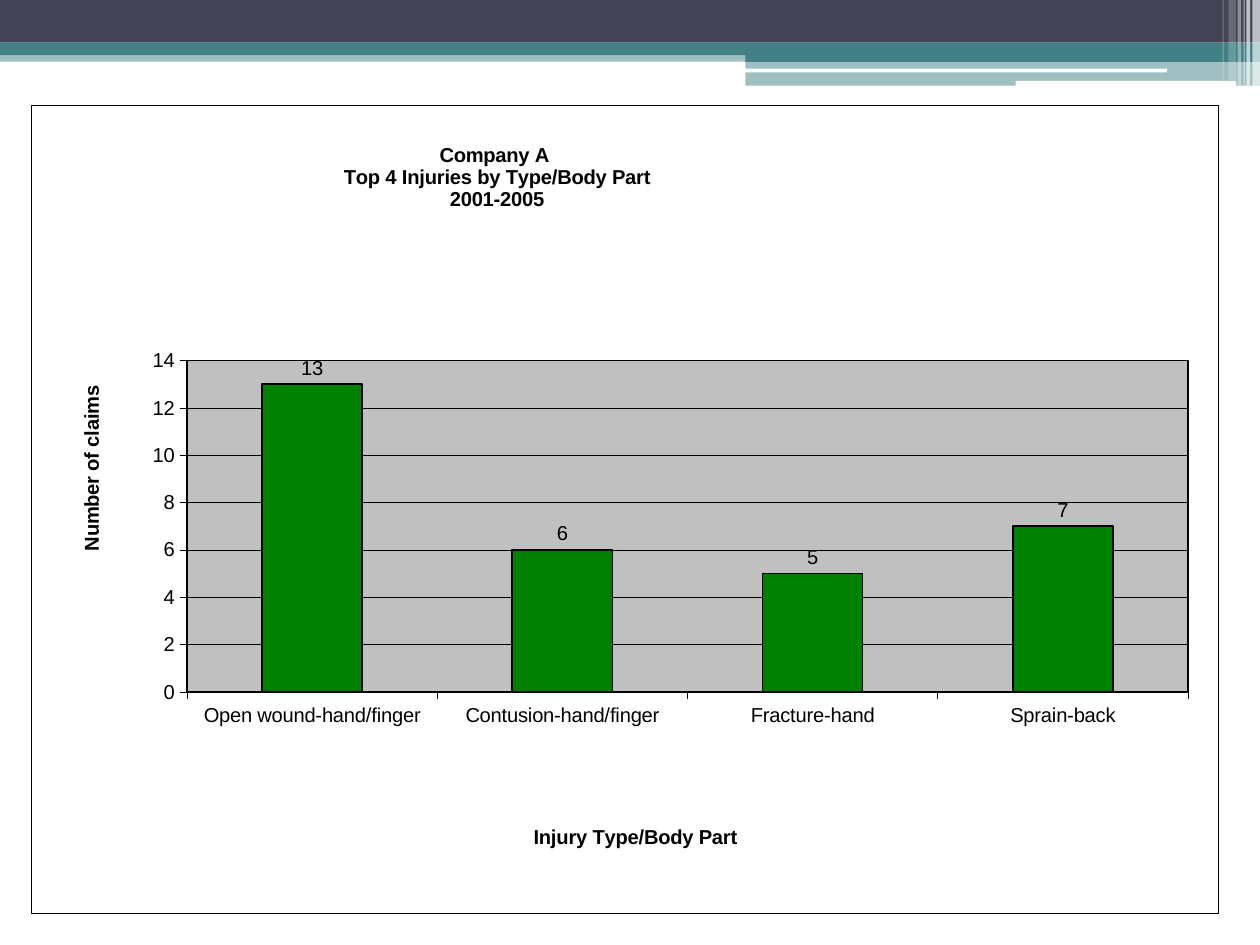
import pptx
import pptx.chart.data
import pptx.dml.color
import pptx.enum.chart
import pptx.enum.shapes
import pptx.oxml
import pptx.oxml.ns
import pptx.util
from lxml import etree

Pt = pptx.util.Pt
qn = pptx.oxml.ns.qn
NS = pptx.oxml.ns.nsdecls("c", "a")

TEAL, NAVY, WHITE, BLACK = "438086", "424456", "FFFFFF", "000000"
GRAY, GREEN = "C0C0C0", "008000"


def color(value):
    return pptx.dml.color.RGBColor.from_string(value)


class SlideBuilder:
    font_name = "Arial"
    font_size = Pt(11.5)
    hairline = Pt(0.25)

    def __init__(self, slide):
        self.slide = slide

    def paint(self, fill, value):
        fill.solid()
        fill.fore_color.rgb = color(value)

    def rule(self, line, width):
        line.color.rgb = color(BLACK)
        line.width = width

    def style_font(self, font, bold=False):
        font.name = self.font_name
        font.size = self.font_size
        font.bold = bold
        font.color.rgb = color(BLACK)

    def bar(self, left, top, width, height, fill, opacity=100, rounded=False):
        kinds = pptx.enum.shapes.MSO_SHAPE
        kind = kinds.ROUNDED_RECTANGLE if rounded else kinds.RECTANGLE
        band = self.slide.shapes.add_shape(kind, Pt(left), Pt(top), Pt(width), Pt(height))
        band.shadow.inherit = False
        band.line.fill.background()
        self.paint(band.fill, fill)
        if opacity < 100:
            tint = band.fill._xPr.find(".//" + qn("a:srgbClr"))
            etree.SubElement(tint, qn("a:alpha"), val=str(opacity * 1000))

    def place(self, element, position, inner=False):
        layout = element.find(qn("c:layout"))
        if layout is None:
            layout = etree.Element(qn("c:layout"))
            text = element.find(qn("c:tx"))
            element.insert(0 if text is None else 1, layout)
        manual = etree.SubElement(layout, qn("c:manualLayout"))
        if inner:
            etree.SubElement(manual, qn("c:layoutTarget"), val="inner")
        for mode in ("xMode", "yMode"):
            etree.SubElement(manual, qn("c:" + mode), val="edge")
        for side, share in zip("xywh", position):
            etree.SubElement(manual, qn("c:" + side), val=str(share))

    def chart_title(self, title, lines, position):
        frame = title.text_frame
        frame.text = "\n".join(lines)
        for paragraph in frame.paragraphs:
            self.style_font(paragraph.font, bold=True)
        self.place(title.element, position)

    def axis(self, axis, caption, position):
        axis.has_title = True
        self.chart_title(axis.axis_title, [caption], position)
        self.style_font(axis.tick_labels.font)
        self.rule(axis.format.line, self.hairline)
        axis.major_tick_mark = pptx.enum.chart.XL_TICK_MARK.OUTSIDE
        axis.minor_tick_mark = pptx.enum.chart.XL_TICK_MARK.NONE

    def area_format(self, value, outline):
        border = (
            f'<a:ln w="{outline}"><a:solidFill><a:srgbClr val="{BLACK}"/></a:solidFill></a:ln>'
        )
        return pptx.oxml.parse_xml(
            f'<c:spPr {NS}><a:solidFill><a:srgbClr val="{value}"/></a:solidFill>{border}</c:spPr>'
        )

    def column_chart(self, box, claims, heading):
        data = pptx.chart.data.CategoryChartData()
        data.categories = list(claims)
        data.add_series("Series 1", list(claims.values()))
        chart = self.slide.shapes.add_chart(
            pptx.enum.chart.XL_CHART_TYPE.COLUMN_CLUSTERED, *map(Pt, box), data
        ).chart
        self.style_font(chart.font)
        chart.has_legend = False
        chart.has_title = True
        self.chart_title(chart.chart_title, heading, (0.26, 0.04))
        self.axis(chart.category_axis, "Injury Type/Body Part", (0.42, 0.885))
        self.axis(chart.value_axis, "Number of claims", (0.036, 0.343))

        scale = chart.value_axis
        scale.minimum_scale, scale.maximum_scale, scale.major_unit = 0, 14, 2
        scale.has_major_gridlines = True
        self.rule(scale.major_gridlines.format.line, self.hairline)

        plot = chart.plots[0]
        plot.gap_width = 150
        plot.vary_by_categories = False
        columns = plot.series[0]
        self.paint(columns.format.fill, GREEN)
        self.rule(columns.format.line, Pt(1))
        labels = columns.data_labels
        labels.show_value = True
        labels.position = pptx.enum.chart.XL_LABEL_POSITION.OUTSIDE_END
        self.style_font(labels.font)

        body = chart.element.find(qn("c:chart"))
        body.addnext(self.area_format(WHITE, self.hairline))
        plot_area = body.find(qn("c:plotArea"))
        plot_area.append(self.area_format(GRAY, Pt(1)))
        self.place(plot_area, (0.131, 0.316, 0.844, 0.41), inner=True)


def main():
    deck = pptx.Presentation()
    deck.slide_width, deck.slide_height = Pt(720), Pt(540)
    builder = SlideBuilder(deck.slides.add_slide(deck.slide_layouts[6]))

    header_bands = [
        (0, 28.8, 720, 6.5, TEAL, 50),
        (0, 0, 720, 24.4, NAVY),
        (0, 24.4, 720, 7.2, TEAL),
        (426, 28.2, 294, 7.2, TEAL),
        (426, 34.7, 294, 14.2, TEAL, 50),
        (425.6, 39.2, 241.2, 2.16, WHITE, 100, True),
        (580.4, 46.2, 126, 2.88, WHITE, 100, True),
    ]
    for band in header_bands:
        builder.bar(*band)

    edge_stripes = [
        (715.6, 4.4, 49, 65),
        (712.2, 2.16, 49, 65),
        (710.6, 0.72, 49, 60),
        (707.2, 2.16, 49, 40),
        (702, 4.32, 46, 20),
        (698.6, 0.72, 46, 30),
    ]
    for left, width, height, opacity in edge_stripes:
        builder.bar(left, 0, width, height, WHITE, opacity)

    claims = {
        "Open wound-hand/finger": 13,
        "Contusion-hand/finger": 6,
        "Fracture-hand": 5,
        "Sprain-back": 7,
    }
    heading = ["Company A ", "Top 4 Injuries by Type/Body Part", "2001-2005"]
    builder.column_chart((18, 60, 678, 462), claims, heading)
    deck.save("out.pptx")


if __name__ == "__main__":
    main()
